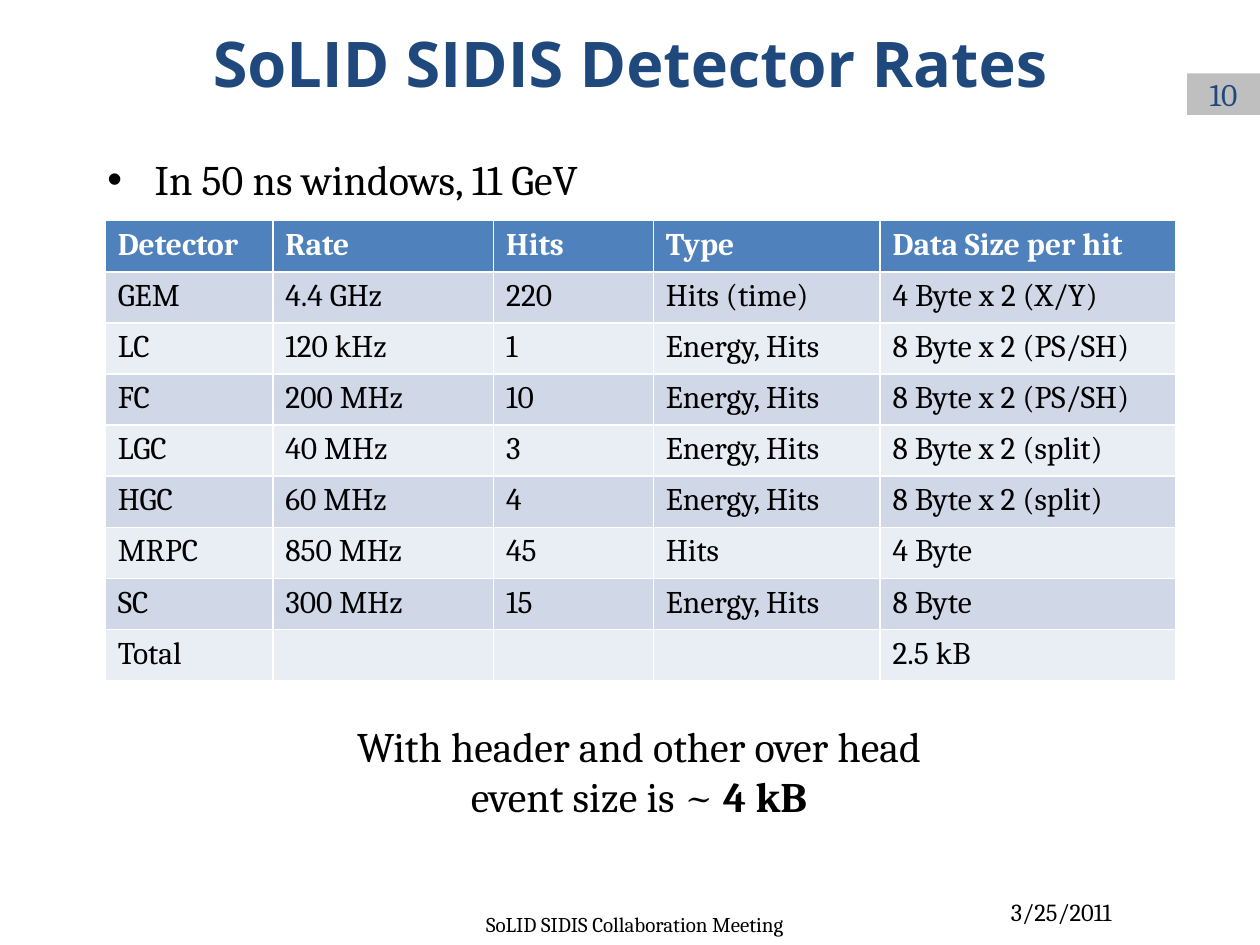
import pptx
import pptx.util
import pptx.dml.color
import pptx.enum.shapes
import pptx.enum.text

Cm = pptx.util.Cm
ALIGN = pptx.enum.text.PP_ALIGN
MIDDLE = pptx.enum.text.MSO_ANCHOR.MIDDLE
SERIF = "Cambria"
NAVY, BLACK, WHITE, GREY = "1F497D", "000000", "FFFFFF", "BFBFBF"
HEAD, BANDS = "4F81BD", ("E9EDF4", "D0D8E8")
WIDTHS = (3.38, 4.45, 3.22, 4.57, 5.97)
ROW = 1.03
RATES = (
    ("Detector", "Rate", "Hits", "Type", "Data Size per hit"),
    ("GEM", "4.4 GHz", "220", "Hits (time)", "4 Byte x 2 (X/Y)"),
    ("LC", "120 kHz", "1", "Energy, Hits", "8 Byte x 2 (PS/SH)"),
    ("FC", "200 MHz", "10", "Energy, Hits", "8 Byte x 2 (PS/SH)"),
    ("LGC", "40 MHz", "3", "Energy, Hits", "8 Byte x 2 (split)"),
    ("HGC", "60 MHz", "4", "Energy, Hits", "8 Byte x 2 (split)"),
    ("MRPC", "850 MHz", "45", "Hits", "4 Byte"),
    ("SC", "300 MHz", "15", "Energy, Hits", "8 Byte"),
    ("Total", "", "", "", "2.5 kB"),
)


def color(code):
    return pptx.dml.color.RGBColor.from_string(code)


def paint(item, code):
    item.fill.solid()
    item.fill.fore_color.rgb = color(code)


def style(para, size, code=BLACK, bold=None, face=SERIF, align=None):
    font = para.font
    font.name, font.size, font.bold = face, pptx.util.Pt(size), bold
    font.color.rgb = color(code)
    if align is not None:
        para.alignment = align


def fill_holder(shape, box, text, size, **look):
    shape.left, shape.top, shape.width, shape.height = map(Cm, box)
    shape.text_frame.text = text
    style(shape.text_frame.paragraphs[0], size, **look)


def add_badge(slide, box, text):
    kind = pptx.enum.shapes.MSO_SHAPE.RECTANGLE
    badge = slide.shapes.add_shape(kind, *map(Cm, box))
    badge.shadow.inherit = False
    paint(badge, GREY)
    badge.line.fill.background()
    frame = badge.text_frame
    frame.text = text
    frame.vertical_anchor = MIDDLE
    style(frame.paragraphs[0], 18, NAVY, align=ALIGN.CENTER)


def add_text(slide, box, lines, size, align, wrap=True, anchor=None):
    frame = slide.shapes.add_textbox(*map(Cm, box)).text_frame
    frame.word_wrap = wrap
    frame.vertical_anchor = anchor
    frame.text = "\n".join(lines)
    for para in frame.paragraphs:
        style(para, size, align=align)
    return frame


def add_rates(slide, left, top):
    size = (sum(WIDTHS), ROW * len(RATES))
    frame = slide.shapes.add_table(
        len(RATES), len(WIDTHS), *map(Cm, (left, top, *size)))
    table = frame.table
    for col, width in zip(table.columns, WIDTHS):
        col.width = Cm(width)
    for r, row in enumerate(RATES):
        table.rows[r].height = Cm(ROW)
        for c, text in enumerate(row):
            cell = table.cell(r, c)
            cell.text = text
            paint(cell, BANDS[r % 2] if r else HEAD)
            style(cell.text_frame.paragraphs[0], 18,
                  BLACK if r else WHITE, bold=r == 0)


def main():
    deck = pptx.Presentation()
    deck.slide_width, deck.slide_height = Cm(25.4), Cm(19.05)
    slide = deck.slides.add_slide(deck.slide_layouts[1])
    title, body = slide.placeholders
    fill_holder(title, (1.91, 0.2, 21.59, 2.11), "SoLID SIDIS Detector Rates",
                36, code=NAVY, bold=True, face="Open Sans", align=ALIGN.CENTER)
    fill_holder(body, (1.91, 2.97, 21.59, 14.4), "In 50 ns windows, 11 GeV", 24)
    add_badge(slide, (23.93, 1.48, 1.47, 0.84), "10")
    add_rates(slide, 2.12, 4.45)
    note = add_text(slide, (6.35, 14.4, 13.06, 2.31),
                    ("With header and other over head", "event size is ~ "),
                    24, ALIGN.CENTER, wrap=False)
    total = note.paragraphs[1].add_run()
    total.text = "4 kB"
    total.font.bold = True
    add_text(slide, (19.05, 17.98, 3.61, 0.81), ("3/25/2011",),
             14, ALIGN.RIGHT, anchor=MIDDLE)
    add_text(slide, (6.55, 18.21, 12.5, 0.84),
             ("SoLID SIDIS Collaboration Meeting",),
             12, ALIGN.CENTER, anchor=MIDDLE)
    deck.save("out.pptx")


if __name__ == "__main__":
    main()
